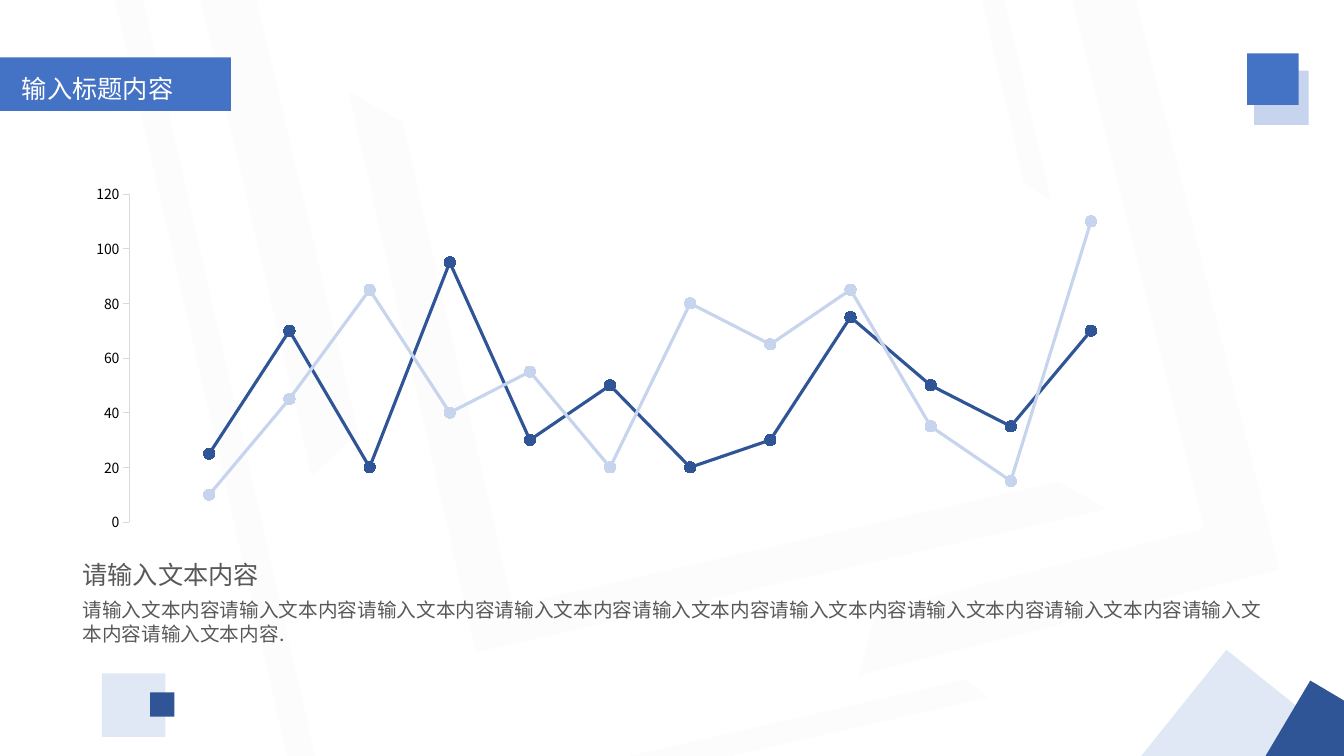
from lxml import etree
from pptx import Presentation
from pptx.chart.data import XyChartData
from pptx.dml.color import RGBColor
from pptx.enum.chart import XL_CHART_TYPE, XL_MARKER_STYLE, XL_TICK_MARK
from pptx.enum.shapes import MSO_SHAPE
from pptx.enum.text import MSO_AUTO_SIZE, PP_ALIGN
from pptx.oxml.ns import qn
from pptx.util import Inches, Pt

SMOOTH_SCATTER = XL_CHART_TYPE.XY_SCATTER_SMOOTH
CIRCLE = XL_MARKER_STYLE.CIRCLE
TICK_OUTSIDE = XL_TICK_MARK.OUTSIDE
HALF_FRAME = MSO_SHAPE.HALF_FRAME
RECTANGLE = MSO_SHAPE.RECTANGLE
BANNER = MSO_SHAPE.PENTAGON
GROW = MSO_AUTO_SIZE.SHAPE_TO_FIT_TEXT
NO_GROW = MSO_AUTO_SIZE.NONE
LEFT = PP_ALIGN.LEFT
JUSTIFY = PP_ALIGN.JUSTIFY

FONT = "Noto Sans CJK SC"
COLORS = {
    "blue": "4472C4",
    "navy": "2F5597",
    "pale": "C7D4ED",
    "gray": "A6A6A6",
    "axis": "D9D9D9",
    "body": "595959",
    "black": "000000",
    "white": "FFFFFF",
}


def rgb(name):
    return RGBColor.from_string(COLORS[name])


class SlideBuilder:
    def __init__(self, slide, font):
        self.slide = slide
        self.font = font

    def style_font(self, font, size, color):
        font.name = self.font
        font.size = Pt(size)
        font.color.rgb = rgb(color)

    def shape(self, kind, box, color, alpha=100, rotation=0, adjust=(), flip=False):
        shape = self.slide.shapes.add_shape(kind, *map(Inches, box))
        shape.shadow.inherit = False
        shape.rotation = rotation
        for index, value in enumerate(adjust):
            shape.adjustments[index] = value
        shape.fill.solid()
        shape.fill.fore_color.rgb = rgb(color)
        shape.line.fill.background()
        properties = shape.element.spPr
        if alpha < 100:
            tint = properties.find(qn("a:solidFill"))[0]
            etree.SubElement(tint, qn("a:alpha"), val=str(alpha * 1000))
        if flip:
            properties.find(qn("a:xfrm")).set("flipH", "1")

    def text(self, box, lines, color, align=LEFT, space_before=0, auto_size=NO_GROW):
        frame = self.slide.shapes.add_textbox(*map(Inches, box)).text_frame
        frame.word_wrap = True
        frame.auto_size = auto_size
        for index, (words, size) in enumerate(lines):
            paragraph = frame.add_paragraph() if index else frame.paragraphs[0]
            paragraph.text = words
            paragraph.alignment = align
            paragraph.space_before = Pt(space_before)
            self.style_font(paragraph.font, size, color)

    def smooth_chart(self, box, curves, x_max, y_max, y_step, plot_area):
        data = XyChartData()
        for name, values, _ in curves:
            points = data.add_series(name)
            for x, y in enumerate(values, start=1):
                points.add_data_point(x, y)
        frame = self.slide.shapes.add_chart(SMOOTH_SCATTER, *map(Inches, box), data)
        chart = frame.chart
        chart.has_legend = False
        chart.has_title = False
        self.style_font(chart.font, 10, "black")

        # Axes
        x_axis, y_axis = chart.category_axis, chart.value_axis
        for axis, maximum in ((x_axis, x_max), (y_axis, y_max)):
            axis.minimum_scale = 0
            axis.maximum_scale = maximum
            axis.has_major_gridlines = False
        x_axis.visible = False
        y_axis.major_unit = y_step
        y_axis.major_tick_mark = TICK_OUTSIDE
        y_axis.format.line.color.rgb = rgb("axis")
        y_axis.format.line.width = Pt(0.5)
        self.style_font(y_axis.tick_labels.font, 10, "black")

        # Curves
        plot = chart.plots[0]
        plot.vary_by_categories = False
        for series, (_, _, color) in zip(plot.series, curves):
            series.format.line.color.rgb = rgb(color)
            series.format.line.width = Pt(2.25)
            marker = series.marker
            marker.style = CIRCLE
            marker.size = 8
            marker.format.fill.solid()
            marker.format.fill.fore_color.rgb = rgb(color)
            marker.format.line.color.rgb = rgb(color)

        # Fixed inner plot area, as fractions of the chart
        area = chart.element.find(".//" + qn("c:plotArea"))
        for layout in area.findall(qn("c:layout")):
            area.remove(layout)
        layout = etree.Element(qn("c:layout"))
        area.insert(0, layout)
        manual = etree.SubElement(layout, qn("c:manualLayout"))
        settings = [("layoutTarget", "inner"), ("xMode", "edge"), ("yMode", "edge")]
        settings += zip("xywh", plot_area)
        for tag, value in settings:
            etree.SubElement(manual, qn("c:" + tag), val=str(value))


def main():
    presentation = Presentation()
    presentation.slide_width = Inches(13.33)
    presentation.slide_height = Inches(7.5)
    slide = presentation.slides.add_slide(presentation.slide_layouts[6])
    builder = SlideBuilder(slide, FONT)

    # Faint background frames: box, rotation, adjustments, flipped
    frames = [
        ((4.37, -0.23, 5.7, 6.42), 257.2, (0.08, 0.065), False),
        ((0.76, -0.29, 9.28, 6.9), 257.2, (0.039, 0.032), False),
        ((7.2, -0.57, 3.01, 2.83), 77, (0.077, 0.052), False),
        ((2.33, -1.89, 9.45, 5.61), 346.8, (0.091, 0.097), False),
        ((5.79, 0.27, 7.74, 4.3), 75.9, (0.144, 0.134), True),
    ]
    for box, rotation, adjust, flip in frames:
        builder.shape(HALF_FRAME, box, "gray", 3, rotation, adjust, flip)

    # Title banner
    builder.shape(BANNER, (0, 0.57, 2.29, 0.53), "blue", adjust=(0,))
    builder.text((0.12, 0.68, 2.17, 0.43), [("输入标题内容", 18)], "white", JUSTIFY)

    # Decorative squares: left, top, side, color, opacity, rotation
    squares = [
        (12.44, 0.7, 0.54, "pale", 100, 0),
        (11.53, 6.75, 1.5, "pale", 53, 308.7),
        (1.01, 6.68, 0.63, "pale", 53, 0),
        (1.49, 6.87, 0.24, "navy", 100, 0),
        (12.37, 0.53, 0.51, "blue", 100, 0),
        (12.7, 6.92, 0.91, "navy", 100, 300.7),
    ]
    for left, top, side, color, alpha, rotation in squares:
        builder.shape(RECTANGLE, (left, top, side, side), color, alpha, rotation)

    # Chart
    curves = [
        ("Series 1", (10, 45, 85, 40, 55, 20, 80, 65, 85, 35, 15, 110), "pale"),
        ("Series 2", (25, 70, 20, 95, 30, 50, 20, 30, 75, 50, 35, 70), "navy"),
    ]
    builder.smooth_chart((0.72, 1.76, 11.93, 3.6), curves, x_max=14, y_max=120,
                         y_step=20, plot_area=(0.047, 0.046, 0.933, 0.904))

    # Caption
    phrase = "请输入文本内容"
    caption = [(phrase, 18), (phrase * 10 + ".", 14)]
    builder.text((0.72, 5.5, 11.93, 0.96), caption, "body",
                 space_before=6, auto_size=GROW)

    presentation.save("out.pptx")


if __name__ == "__main__":
    main()
